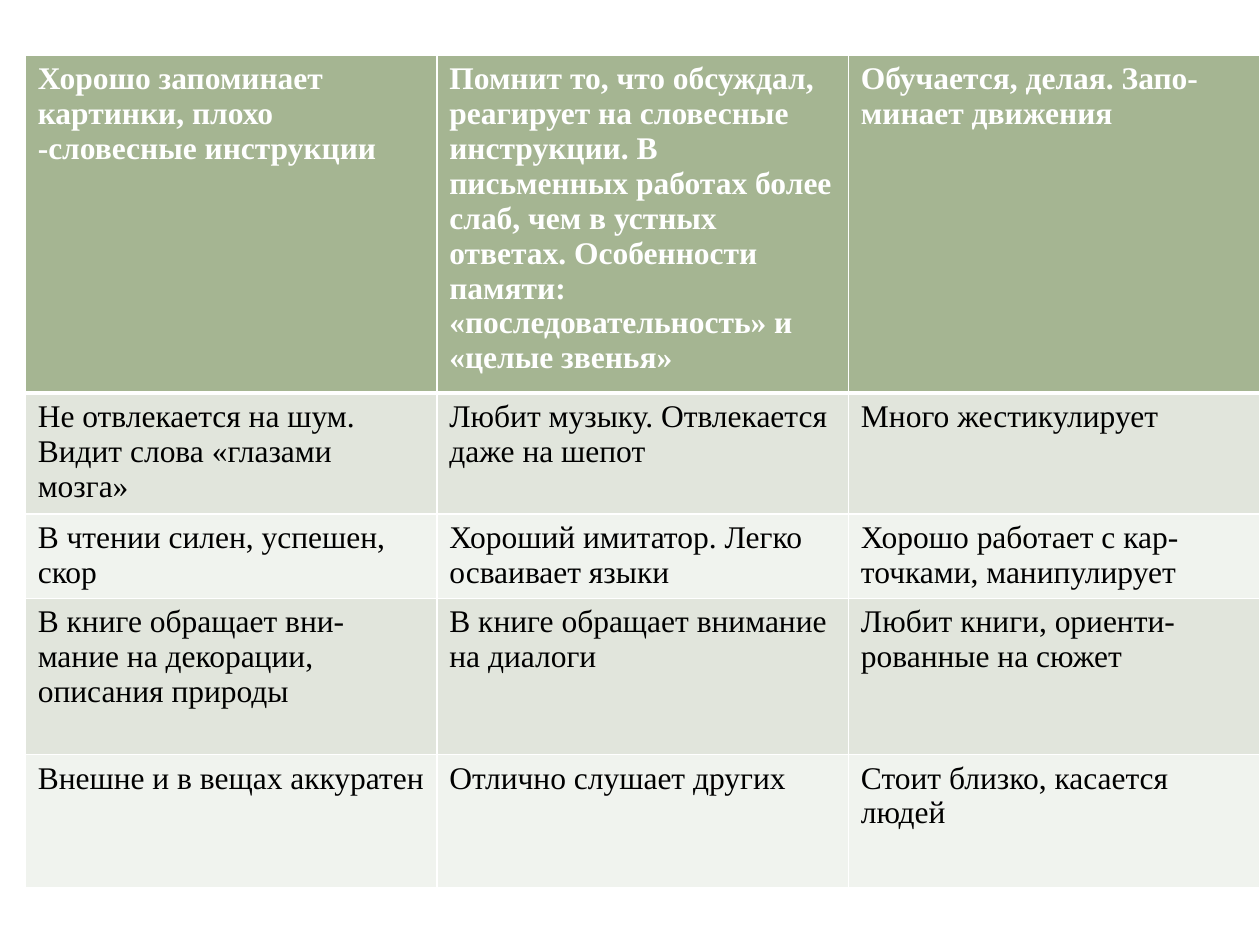
"""Build a slide with a table comparing three learning styles."""
import lxml.etree
import pptx
import pptx.dml.color
import pptx.oxml.ns
import pptx.util

ROWS = [
    ("Хорошо запоминает картинки, плохо -словесные инструкции",
     "Помнит то, что обсуждал, реагирует на словесные инструкции. "
     "В письменных работах более слаб, чем в устных ответах. "
     "Особенности памяти: «последовательность» и «целые звенья»",
     "Обучается, делая. Запо-минает движения"),
    ("Не отвлекается на шум. Видит слова «глазами мозга»",
     "Любит музыку. Отвлекается даже на шепот",
     "Много жестикулирует"),
    ("В чтении силен, успешен, скор",
     "Хороший имитатор. Легко осваивает языки",
     "Хорошо работает с кар-точками, манипулирует"),
    ("В книге обращает вни-мание на декорации, описания природы",
     "В книге обращает внимание на диалоги",
     "Любит книги, ориенти-рованные на сюжет"),
    ("Внешне и в вещах аккуратен",
     "Отлично слушает других",
     "Стоит близко, касается людей"),
]
ROW_HEIGHTS = [2.68, 0.96, 0.67, 1.24, 1.06]
SLIDE_WIDTH, SLIDE_HEIGHT = 10, 7.5
LEFT, TOP = 0.2, 0.44

WHITE = pptx.dml.color.RGBColor(0xFF, 0xFF, 0xFF)
BLACK = pptx.dml.color.RGBColor(0x00, 0x00, 0x00)
HEADER_GREEN = pptx.dml.color.RGBColor(0xA5, 0xB5, 0x92)
BANDS = [pptx.dml.color.RGBColor(0xF0, 0xF3, 0xEE),
         pptx.dml.color.RGBColor(0xE1, 0xE5, 0xDC)]
FONT = {"name": "Times New Roman", "size": pptx.util.Pt(18)}


def set_borders(cell, widths):
    """Draw white borders, given a width in points for each side."""
    properties = cell._tc.get_or_add_tcPr()
    for position, (side, width) in enumerate(widths.items()):
        line = lxml.etree.Element(pptx.oxml.ns.qn(f"a:ln{side}"), w=str(pptx.util.Pt(width)))
        fill = lxml.etree.SubElement(line, pptx.oxml.ns.qn("a:solidFill"))
        lxml.etree.SubElement(fill, pptx.oxml.ns.qn("a:srgbClr"), val=str(WHITE))
        properties.insert(position, line)


def fill_cell(cell, text, row):
    """Write and format one cell according to its row."""
    header = row == 0
    cell.text = text
    cell.fill.solid()
    cell.fill.fore_color.rgb = HEADER_GREEN if header else BANDS[row % 2]
    font = cell.text_frame.paragraphs[0].runs[0].font
    for name, value in {**FONT, "bold": header}.items():
        setattr(font, name, value)
    font.color.rgb = WHITE if header else BLACK
    set_borders(cell, {"L": 1, "R": 1, "T": 3 if row == 1 else 1, "B": 3 if header else 1})


def main():
    """Create the presentation and save it."""
    presentation = pptx.Presentation()
    presentation.slide_width = pptx.util.Inches(SLIDE_WIDTH)
    presentation.slide_height = pptx.util.Inches(SLIDE_HEIGHT)
    slide = presentation.slides.add_slide(presentation.slide_layouts[6])
    bounds = (LEFT, TOP, SLIDE_WIDTH - LEFT, sum(ROW_HEIGHTS))
    table = slide.shapes.add_table(
        len(ROWS), len(ROWS[0]), *map(pptx.util.Inches, bounds)).table
    for row, (texts, height) in enumerate(zip(ROWS, ROW_HEIGHTS)):
        table.rows[row].height = pptx.util.Inches(height)
        for column, text in enumerate(texts):
            fill_cell(table.cell(row, column), text, row)
    presentation.save("out.pptx")


if __name__ == "__main__":
    main()
